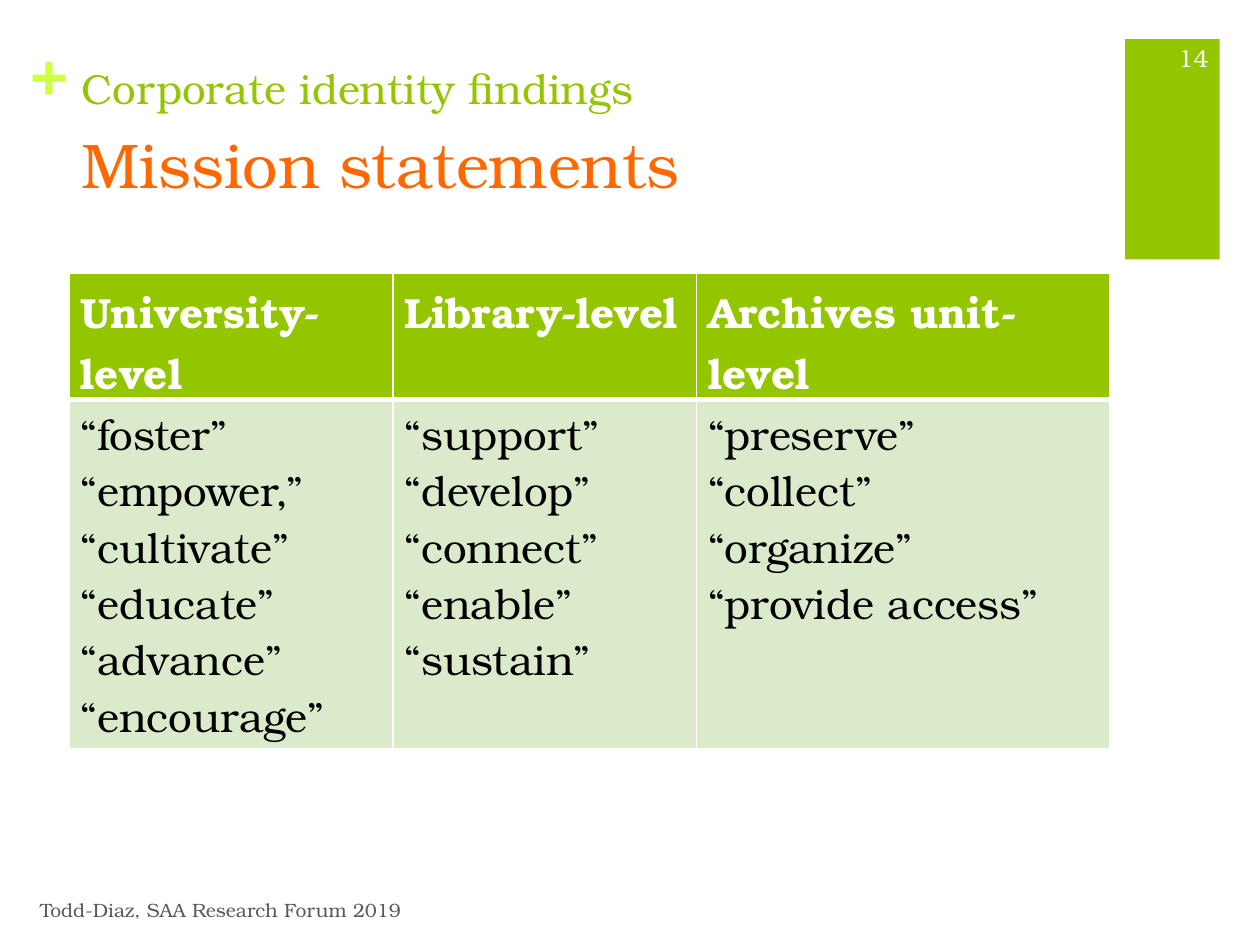
import lxml.etree
import pptx
import pptx.dml.color
import pptx.enum.shapes
import pptx.enum.text
import pptx.oxml.ns
import pptx.util
from pptx.util import Inches

FONT = "TeX Gyre Bonum"
GREEN = "94C600"
WHITE = "FFFFFF"
ANCHOR = pptx.enum.text.MSO_ANCHOR
ALIGN = pptx.enum.text.PP_ALIGN

COLUMNS = [
    (2.57, "University-level",
     ["“foster”", "“empower,” “cultivate”", "“educate”", "“advance” “encourage”"]),
    (2.41, "Library-level",
     ["“support”", "“develop”", "“connect”", "“enable”", "“sustain”"]),
    (3.28, "Archives unit-level",
     ["“preserve”", "“collect”", "“organize”", "“provide access”"]),
]


def color(value):
    return pptx.dml.color.RGBColor.from_string(value)


def write(text_frame, lines, size, font_color, bold=False, align=ALIGN.LEFT):
    text_frame.word_wrap = True
    for index, line in enumerate(lines):
        paragraph = text_frame.paragraphs[0] if index == 0 else text_frame.add_paragraph()
        paragraph.alignment = align
        run = paragraph.add_run()
        run.text = line
        run.font.name = FONT
        run.font.size = pptx.util.Pt(size)
        run.font.bold = bold
        run.font.color.rgb = color(font_color)


def place(shape, box):
    shape.left, shape.top, shape.width, shape.height = (Inches(value) for value in box)


def add_text(slide, box, text, size, font_color, anchor=ANCHOR.TOP, **style):
    text_box = slide.shapes.add_textbox(*(Inches(value) for value in box))
    text_box.text_frame.vertical_anchor = anchor
    write(text_box.text_frame, [text], size, font_color, **style)
    return text_box


def add_page_tab(slide, box, number):
    left, top, width, height = box
    tab = slide.shapes.add_shape(
        pptx.enum.shapes.MSO_SHAPE.RECTANGLE, *(Inches(value) for value in box))
    tab.shadow.inherit = False
    tab.fill.solid()
    tab.fill.fore_color.rgb = color(GREEN)
    tab.line.fill.background()
    add_text(slide, (left + 0.15, top - 0.05, 0.61, 0.4), number, 14, WHITE,
             ANCHOR.MIDDLE, align=ALIGN.RIGHT)


def add_heading(slide, box, title, subtitle):
    left, top, width, height = box
    plus = add_text(slide, (left - 0.31, top + 0.1, 0.29, 0.61), "+", 36, "D0FF44", bold=True)
    frame = plus.text_frame
    frame.margin_left = frame.margin_right = frame.margin_top = frame.margin_bottom = 0
    frame.word_wrap = False

    placeholder = slide.shapes.title
    place(placeholder, (left, top, width, 0.8))
    placeholder.text_frame.vertical_anchor = ANCHOR.BOTTOM
    write(placeholder.text_frame, [title], 24, GREEN)

    body = add_text(slide, (left, top + 0.8, width, height - 0.8), subtitle, 36, "FF6700")
    body.text_frame.paragraphs[0].space_before = pptx.util.Pt(20)


def set_borders(cell, bottom_width):
    properties = cell._tc.get_or_add_tcPr()
    widths = {"lnL": 1, "lnR": 1, "lnT": 1, "lnB": bottom_width}
    for index, (side, width) in enumerate(widths.items()):
        line = lxml.etree.Element(pptx.oxml.ns.qn("a:" + side), w=str(pptx.util.Pt(width)))
        fill = lxml.etree.SubElement(line, pptx.oxml.ns.qn("a:solidFill"))
        lxml.etree.SubElement(fill, pptx.oxml.ns.qn("a:srgbClr"), val=WHITE)
        properties.insert(index, line)


def fill_cell(cell, lines, fill, font_color, bold, bottom_width):
    cell.margin_left = cell.margin_right = Inches(0.09)
    cell.margin_top = cell.margin_bottom = Inches(0.05)
    cell.fill.solid()
    cell.fill.fore_color.rgb = color(fill)
    write(cell.text_frame, lines, 24, font_color, bold)
    set_borders(cell, bottom_width)


def add_statement_table(slide, box):
    table = slide.shapes.add_table(
        2, len(COLUMNS), *(Inches(value) for value in box)).table
    table.rows[0].height = Inches(1)
    table.rows[1].height = Inches(box[3] - 1)
    for index, (width, heading, words) in enumerate(COLUMNS):
        table.columns[index].width = Inches(width)
        fill_cell(table.cell(0, index), [heading], GREEN, WHITE, True, 3)
        fill_cell(table.cell(1, index), words, "DCEACC", "000000", False, 1)
    for index in range(len(COLUMNS)):
        top_line = table.cell(1, index)._tc.tcPr.find(pptx.oxml.ns.qn("a:lnT"))
        top_line.set("w", str(pptx.util.Pt(3)))


def main():
    presentation = pptx.Presentation()
    presentation.slide_width = Inches(10)
    presentation.slide_height = Inches(7.5)
    slide = presentation.slides.add_slide(presentation.slide_layouts[5])
    add_page_tab(slide, (8.93, 0.31, 0.75, 1.75), "14")
    add_heading(slide, (0.55, 0.15, 8.26, 1.93),
                "Corporate identity findings", "Mission statements")
    add_statement_table(slide, (0.55, 2.17, 8.26, 3.77))
    add_text(slide, (0.22, 7.02, 6.7, 0.4), "Todd-Diaz, SAA Research Forum 2019",
             11, "595959", ANCHOR.MIDDLE)
    presentation.save("out.pptx")


if __name__ == "__main__":
    main()
